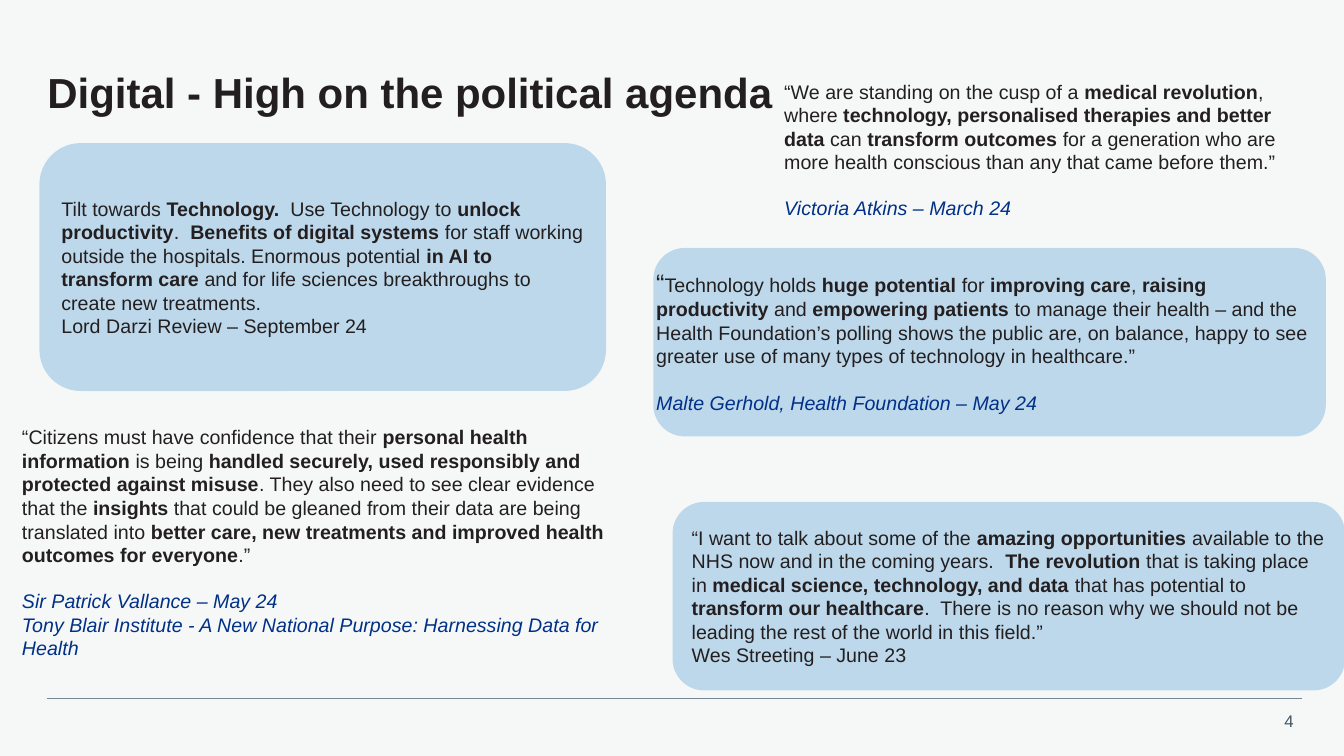
from pptx import Presentation
from pptx.dml.color import RGBColor
from pptx.enum.shapes import MSO_CONNECTOR as Conn, MSO_SHAPE as Shape
from pptx.enum.text import MSO_ANCHOR as Anchor, PP_ALIGN as Align
from pptx.oxml.ns import qn
from pptx.util import Inches, Pt
from lxml.etree import SubElement

PAPER = RGBColor(0xF6, 0xF8, 0xF8)
INK = RGBColor(0x23, 0x1F, 0x20)
NAVY = RGBColor(0x00, 0x30, 0x87)
BLUE = RGBColor(0x00, 0x70, 0xC0)
SLATE = RGBColor(0x42, 0x55, 0x63)
GREY = RGBColor(0x76, 0x86, 0x92)

WIDE, HIGH = Inches(13.33), Inches(7.5)
FONT = "Arial"
LINE = 16.1

TITLE = ["**Digital - High on the political agenda**"]
ATKINS = [
    "“We are standing on the cusp of a **medical revolution**, where **technology, personalised "
    "therapies and better data** can **transform outcomes **for a generation who are more health "
    "conscious than any that came before them.”",
    "_Victoria Atkins – March 24",
]
VALLANCE = [
    "“Citizens must have confidence that their **personal health information** is being **handled "
    "securely, used responsibly and protected against misuse**. They also need to see clear evidence "
    "that the **insights** that could be gleaned from their data are being translated into **better "
    "care, new treatments and improved health outcomes for everyone**.”",
    "_Sir Patrick Vallance – May 24",
    "_Tony Blair Institute - A New National Purpose: Harnessing Data for Health",
]
GERHOLD = [
    "“Technology holds **huge potential **for **improving care**, **raising productivity **and "
    "**empowering patients **to manage their health – and the Health Foundation’s polling shows the "
    "public are, on balance, happy to see greater use of many types of technology in healthcare.”",
    "_Malte Gerhold, Health Foundation – May 24",
]
WES = [
    "“I want to talk about some of the **amazing opportunities **available to the NHS now and in the "
    "coming years.  **The revolution **that is taking place in **medical science, technology, and "
    "data **that has potential to **transform our healthcare**.  There is no reason why we should "
    "not be leading the rest of the world in this field.”",
    "Wes Streeting – June 23",
]
DARZI = [
    "Tilt towards **Technology.**  Use Technology to **unlock productivity**.  **Benefits of digital "
    "systems** for staff working outside the hospitals. Enormous potential **in AI to transform care "
    "**and for life sciences breakthroughs to create new treatments.",
    "Lord Darzi Review – September 24",
]

# Shares of the slide in percent: left, top, width, height
SPOTS = {
    "page": (93.92, 93.33, 3.08, 4),
    "title": (3.53, 6.27, 93.55, 12.67),
    "atkins": (57.61, 9.87, 38.63, 20.13),
    "vallance": (0.9, 55.6, 46.14, 32.8),
    "panel": (48.61, 32.8, 50.04, 24.93),
    "gerhold": (48.09, 34.67, 51.09, 21.07),
    "wes": (50.04, 66.4, 50.04, 24.93),
    "darzi": (2.93, 18.93, 42.16, 32.8),
}
RULE = (3.53, 96.85, 92.4)


def across(share):
    return int(WIDE * share / 100)


def down(share):
    return int(HIGH * share / 100)


def place(name):
    left, top, width, height = SPOTS[name]
    return across(left), down(top), across(width), down(height)


def write(shape, lines, size=14, color=INK, align=Align.LEFT, anchor=Anchor.TOP,
          inset=None, space=None, lead=None):
    frame = shape.text_frame
    frame.word_wrap = True
    frame.vertical_anchor = anchor
    if inset is not None:
        frame.margin_left = frame.margin_right = inset
        frame.margin_top = frame.margin_bottom = inset
    cited = False
    for row, line in enumerate(lines):
        para = frame.add_paragraph() if row else frame.paragraphs[0]
        para.alignment = align
        if space:
            para.line_spacing = space
        source = line.startswith("_")
        if source and not cited:
            para.space_before = Pt(LINE)
        cited = source
        parts = [(text, part % 2 == 1, size)
                 for part, text in enumerate(line.lstrip("_").split("**"))]
        if lead and row == 0:
            first = parts[0][0]
            parts[:1] = [(first[0], False, lead), (first[1:], False, size)]
        for text, bold, points in parts:
            if text:
                run = para.add_run()
                run.text = text
                run.font.name = FONT
                run.font.size = Pt(points)
                run.font.bold = bold
                run.font.italic = source
                run.font.color.rgb = NAVY if source else color


def box(name, lines, **form):
    write(slide.shapes.add_textbox(*place(name)), lines, **form)


def card(name, lines=()):
    shape = slide.shapes.add_shape(Shape.ROUNDED_RECTANGLE, *place(name))
    shape.shadow.inherit = False
    shape.fill.solid()
    shape.fill.fore_color.rgb = BLUE
    tint = shape.fill._xPr.find(qn("a:solidFill"))[0]
    SubElement(tint, qn("a:alpha")).set("val", "23000")
    shape.line.fill.background()
    if lines:
        write(shape, lines, anchor=Anchor.MIDDLE)


def rule():
    start, end, level = RULE
    line = slide.shapes.add_connector(
        Conn.STRAIGHT, across(start), down(level), across(end), down(level))
    line.line.color.rgb = GREY
    line.line.width = Pt(0.5)
    SubElement(line._element.spPr, qn("a:effectLst"))


deck = Presentation()
deck.slide_width, deck.slide_height = WIDE, HIGH
slide = deck.slides.add_slide(deck.slide_layouts[6])
slide.background.fill.solid()
slide.background.fill.fore_color.rgb = PAPER

box("page", ["4"], size=12, color=SLATE, align=Align.RIGHT)
rule()
box("title", TITLE, size=30, anchor=Anchor.MIDDLE, inset=0, space=0.9)
box("atkins", ATKINS)
box("vallance", VALLANCE)
card("panel")
box("gerhold", GERHOLD, lead=18)
card("wes", WES)
card("darzi", DARZI)

deck.save("out.pptx")
